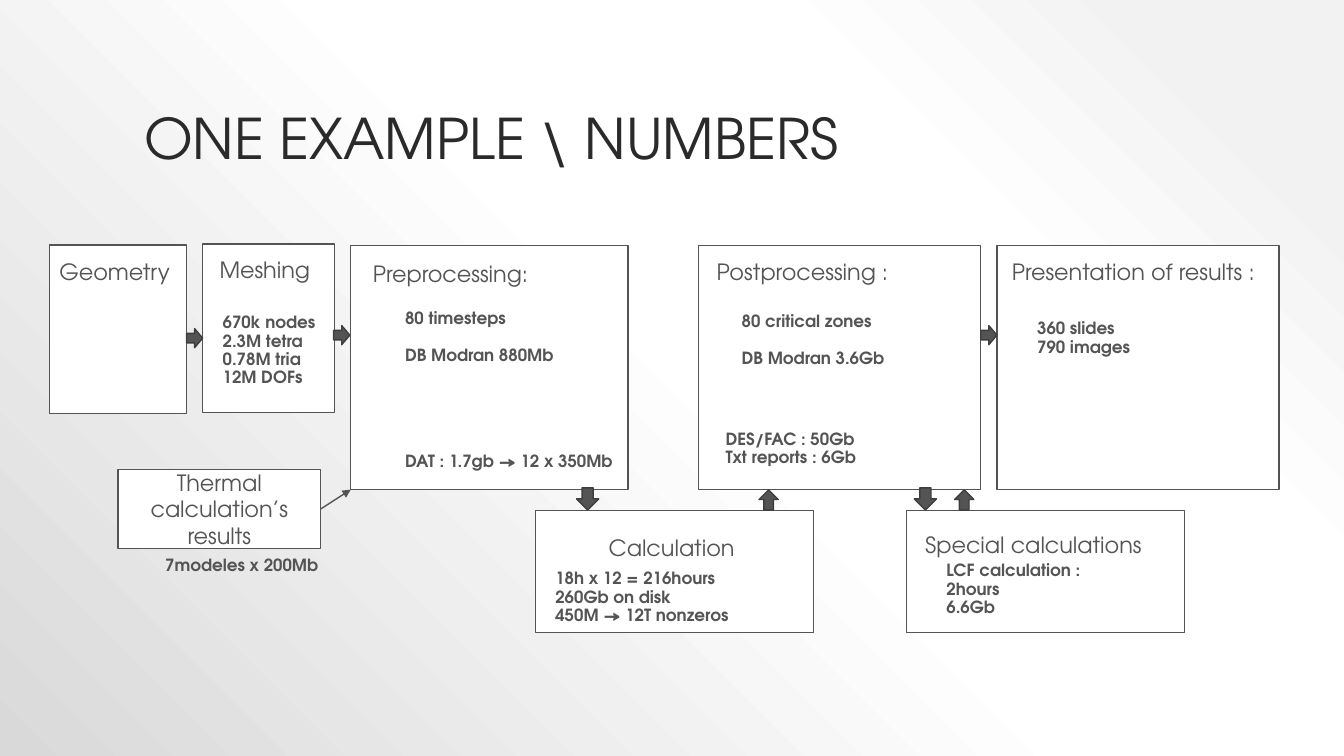
from dataclasses import dataclass
from typing import Any

from lxml.etree import SubElement as Sub
from pptx import Presentation
from pptx.dml.color import RGBColor as Rgb
from pptx.enum.shapes import MSO_CONNECTOR as Wire, MSO_SHAPE as Kind
from pptx.enum.text import MSO_ANCHOR as Anchor, PP_ALIGN as Align
from pptx.oxml import parse_xml
from pptx.oxml.ns import nsdecls, qn
from pptx.util import Inches, Pt

WIDE, HIGH = Inches(13.333), Inches(7.5)
FACE, INK, EDGE, DARK, PAPER = "TeX Gyre Adventor", "545454", "3E3E3E", "2A2A2A", "FFFFFF"
TITLE = {"size": Pt(40), "name": FACE}
HEAD = {"size": Pt(16), "name": FACE}
NOTE = {"size": Pt(12), "name": FACE, "bold": True}
STOPS = [(10, "F2F2F2"), (28, "FFFFFF"), (48, "FFFFFF"), (100, "D9D9D9")]


@dataclass
class Box:
    x: float
    y: float
    w: float
    h: float


@dataclass
class Label:
    x: float
    y: float
    w: float
    lines: tuple[str, ...]
    gap: int = 0


@dataclass
class Arrow:
    kind: Any
    x: float
    y: float


TOP, LOW, TALL, SHORT = 32.5, 67.5, 32.27, 16.13
CARDS = [
    Box(3.68, 32.4, 10.2, 22.27),
    Box(15.08, 32.27, 9.83, 22.27),
    Box(26.1, TOP, 20.63, TALL),
    Box(51.98, TOP, 21, TALL),
    Box(74.18, TOP, 21, TALL),
    Box(39.83, LOW, 20.7, SHORT),
    Box(67.43, LOW, 20.7, SHORT),
]
THERMAL = Box(8.78, 62.13, 15.08, 10.4)
HEADS = [
    Label(3.68, 33.87, 15.38, ("Geometry",)),
    Label(15.6, 33.6, 15.38, ("Meshing",)),
    Label(27, 34.13, 20.4, ("Preprocessing:",)),
    Label(52.58, 33.87, 19.35, ("Postprocessing :",)),
    Label(74.55, 33.87, 20.7, ("Presentation of results :",)),
    Label(44.55, 70.4, 13.35, ("Calculation",)),
    Label(68.1, 70, 19.35, ("Special calculations",)),
]
NOTES = [
    Label(15.83, 40.93, 9.45, ("670k nodes", "2.3M tetra", "0.78M tria", "12M DOFs")),
    Label(11.55, 73.07, 13.43, ("7modeles x 200Mb",)),
    Label(29.4, 40.4, 13.43, ("80 timesteps", "DB Modran 880Mb"), 13),
    Label(29.4, 59.33, 17.55, ("DAT : 1.7gb → 12 x 350Mb",)),
    Label(54.45, 40.8, 13.43, ("80 critical zones", "DB Modran 3.6Gb"), 13),
    Label(53.25, 56.4, 13.43, ("DES/FAC : 50Gb", "Txt reports : 6Gb")),
    Label(76.43, 41.73, 13.43, ("360 slides", "790 images")),
    Label(40.58, 74.8, 16.05, ("18h x 12 = 216hours", "260Gb on disk", "450M → 12T nonzeros")),
    Label(69.68, 73.73, 13.43, ("LCF calculation :", "2hours", "6.6Gb")),
]
RIGHT, DOWN, UP = Kind.RIGHT_ARROW, Kind.DOWN_ARROW, Kind.UP_ARROW
SIZES = {RIGHT: (1.2, 2.53), DOWN: (1.65, 2.93), UP: (1.43, 2.67)}
ARROWS = [
    Arrow(RIGHT, 13.88, 43.47),
    Arrow(RIGHT, 24.83, 43.07),
    Arrow(RIGHT, 72.98, 43.07),
    Arrow(DOWN, 42.9, 64.53),
    Arrow(DOWN, 68.03, 64.53),
    Arrow(UP, 56.48, 64.8),
    Arrow(UP, 71.03, 64.8),
]


def col(share: float) -> int:
    """Turn a percentage of the slide width into a length."""
    return round(WIDE * share / 100)


def row(share: float) -> int:
    """Turn a percentage of the slide height into a length."""
    return round(HIGH * share / 100)


def place(box: Box) -> tuple[int, int, int, int]:
    """Return left, top, width and height of a box."""
    return col(box.x), row(box.y), col(box.w), row(box.h)


def tint(part: Any, color: str) -> None:
    """Paint a fill, or the fill of a line."""
    part.solid()
    part.fore_color.rgb = Rgb.from_string(color)


def dress(target: Any, form: dict[str, Any]) -> None:
    """Set every attribute of a format on its target."""
    for name, value in form.items():
        setattr(target, name, value)


def write(frame: Any, lines: tuple[str, ...], font: dict[str, Any],
          form: dict[str, Any], color: str = INK, gap: int = 0) -> None:
    """Fill a text frame, one paragraph a line."""
    frame.word_wrap = True
    for i, line in enumerate(lines):
        para = frame.paragraphs[0] if i == 0 else frame.add_paragraph()
        dress(para, form | {"space_before": Pt(gap if i else 0)})
        run = para.add_run()
        run.text = line
        dress(run.font, font)
        tint(run.font.fill, color)


def shape(slide: Any, kind: Any, box: Box, fill: str, edge: str) -> Any:
    """Draw a filled and outlined preset shape."""
    item = slide.shapes.add_shape(kind, *place(box))
    item.shadow.inherit = False
    tint(item.fill, fill)
    tint(item.line.fill, edge)
    item.line.width = Pt(1)
    return item


def label(slide: Any, spot: Label, font: dict[str, Any]) -> None:
    """Draw a text box as high as its lines need."""
    size = font["size"].pt * 1.1 * len(spot.lines) + 7.2 + spot.gap
    box = Box(spot.x, spot.y, spot.w, size / 5.4)
    frame = slide.shapes.add_textbox(*place(box)).text_frame
    write(frame, spot.lines, font, {"line_spacing": 0.9}, gap=spot.gap)


def link(slide: Any, start: tuple[float, float], end: tuple[float, float]) -> None:
    """Draw a thin line with an arrowhead at its end."""
    wire = slide.shapes.add_connector(
        Wire.STRAIGHT, col(start[0]), row(start[1]), col(end[0]), row(end[1]))
    tint(wire.line.fill, INK)
    wire.line.width = Pt(1)
    Sub(wire.line._get_or_add_ln(), qn("a:tailEnd"), type="triangle")
    Sub(wire._element.spPr, qn("a:effectLst"))


def paint(slide: Any) -> None:
    """Give the slide a round gradient from its top right corner."""
    slide.background.fill.solid()
    back = slide.element.find(".//" + qn("p:bgPr"))
    stops = "".join(f'<a:gs pos="{pos * 1000}"><a:srgbClr val="{color}"/></a:gs>'
                    for pos, color in STOPS)
    back.replace(back[0], parse_xml(
        f'<a:gradFill {nsdecls("a")} rotWithShape="1"><a:gsLst>{stops}</a:gsLst>'
        '<a:path path="circle"><a:fillToRect l="100000" b="100000"/></a:path></a:gradFill>'))


def main() -> None:
    """Build the slide and save it."""
    deck = Presentation()
    deck.slide_width, deck.slide_height = WIDE, HIGH
    slide = deck.slides.add_slide(deck.slide_layouts[6])
    paint(slide)
    title = slide.shapes.add_textbox(*place(Box(9.98, 4, 87.23, 19.33))).text_frame
    title.vertical_anchor = Anchor.BOTTOM
    write(title, ("ONE EXAMPLE \\ NUMBERS",), TITLE, {"line_spacing": 0.9}, DARK)
    for card in CARDS:
        shape(slide, Kind.RECTANGLE, card, PAPER, INK)
    for arrow in ARROWS:
        shape(slide, arrow.kind, Box(arrow.x, arrow.y, *SIZES[arrow.kind]), INK, EDGE)
    for spots, font in ((HEADS, HEAD), (NOTES, NOTE)):
        for spot in spots:
            label(slide, spot, font)
    frame = shape(slide, Kind.RECTANGLE, THERMAL, PAPER, INK).text_frame
    frame.vertical_anchor = Anchor.MIDDLE
    write(frame, ("Thermal calculation’s results",), HEAD, {"alignment": Align.CENTER})
    link(slide, (THERMAL.x + THERMAL.w, THERMAL.y + THERMAL.h / 2), (CARDS[2].x, TOP + TALL))
    deck.save("out.pptx")


if __name__ == "__main__":
    main()
